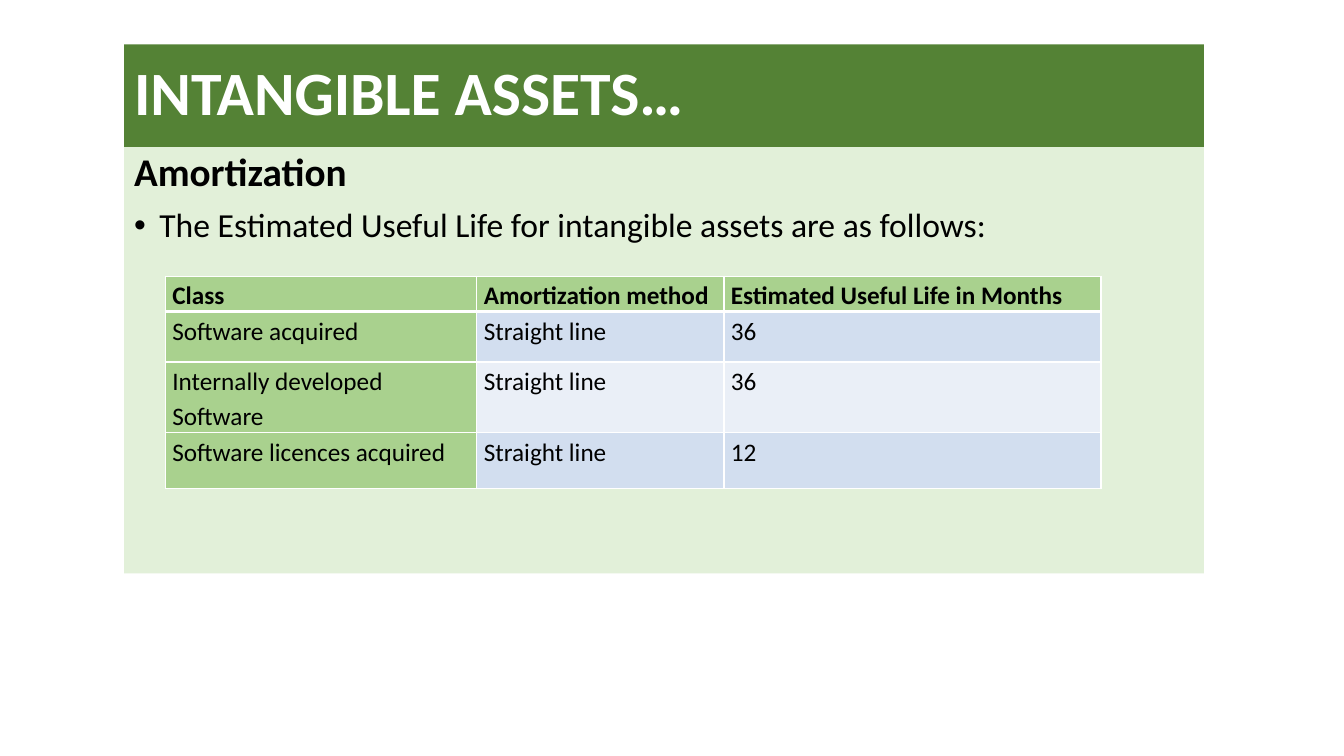
from lxml import etree
from pptx import Presentation
from pptx.dml.color import RGBColor
from pptx.enum.text import MSO_ANCHOR as Anchor, MSO_AUTO_SIZE as AutoSize, PP_ALIGN as Align
from pptx.oxml.ns import qn
from pptx.util import Inches, Pt

DARK_GREEN = RGBColor(0x54, 0x82, 0x35)
MID_GREEN = RGBColor(0xA9, 0xD1, 0x8E)
PALE_GREEN = RGBColor(0xE2, 0xF0, 0xD9)
BLUE = RGBColor(0xD2, 0xDE, 0xEF)
PALE_BLUE = RGBColor(0xEA, 0xEF, 0xF7)
WHITE = RGBColor(0xFF, 0xFF, 0xFF)
BLACK = RGBColor(0, 0, 0)

PANEL_LEFT, PANEL_WIDTH = 1.23, 10.71
TITLE_TOP, TITLE_HEIGHT = 0.44, 1.02
BODY_HEIGHT = 4.23
COLUMN_WIDTHS = [3.09, 2.45, 3.74]
ROW_HEIGHTS = [0.35, 0.5, 0.7, 0.55]
ROWS = [
    ["Class", "Amortization method", "Estimated Useful Life in Months"],
    ["Software acquired", "Straight line", "36"],
    ["Internally developed Software", "Straight line", "36"],
    ["Software licences acquired", "Straight line", "12"],
]


def style(paragraph, size, bold, color, spacing):
    paragraph.font.name = "Calibri"
    paragraph.font.size = Pt(size)
    paragraph.font.bold = bold
    paragraph.font.color.rgb = color
    paragraph.line_spacing = spacing
    paragraph.alignment = Align.LEFT


def add_border(cell, side, width):
    line = etree.SubElement(cell._tc.get_or_add_tcPr(), qn("a:" + side), w=str(Pt(width)))
    fill = etree.SubElement(line, qn("a:solidFill"))
    etree.SubElement(fill, qn("a:srgbClr"), val=str(WHITE))


presentation = Presentation()
presentation.slide_width, presentation.slide_height = Inches(13.33), Inches(7.5)
slide = presentation.slides.add_slide(presentation.slide_layouts[1])
title, body = slide.shapes.title, slide.placeholders[1]

# Title band and body panel, stacked
panels = [
    (title, TITLE_TOP, TITLE_HEIGHT, DARK_GREEN, Anchor.MIDDLE),
    (body, TITLE_TOP + TITLE_HEIGHT, BODY_HEIGHT, PALE_GREEN, Anchor.TOP),
]
for panel, top, height, color, anchor in panels:
    panel.left, panel.top = Inches(PANEL_LEFT), Inches(top)
    panel.width, panel.height = Inches(PANEL_WIDTH), Inches(height)
    panel.fill.solid()
    panel.fill.fore_color.rgb = color
    panel.text_frame.auto_size = AutoSize.NONE
    panel.text_frame.vertical_anchor = anchor

title.text_frame.text = "INTANGIBLE ASSETS…"
style(title.text_frame.paragraphs[0], 44, True, WHITE, 0.9)

# Heading and bullet
body.text_frame.text = "Amortization\nThe Estimated Useful Life for intangible assets are as follows:"
heading, bullet = body.text_frame.paragraphs
for paragraph, size, bold, indent, mark in [
    (heading, 28, True, 0, None),
    (bullet, 24, False, 0.25, "•"),
]:
    style(paragraph, size, bold, BLACK, 0.9)
    paragraph.space_before = Pt(10)
    properties = paragraph._p.get_or_add_pPr()
    properties.set("marL", str(Inches(indent)))
    properties.set("indent", str(Inches(-indent)))
    if mark:
        etree.SubElement(properties, qn("a:buFont"), typeface="Arial")
        etree.SubElement(properties, qn("a:buChar"), char=mark)
    else:
        etree.SubElement(properties, qn("a:buNone"))

# Useful life table
table = slide.shapes.add_table(
    len(ROWS), len(COLUMN_WIDTHS), Inches(1.64), Inches(2.74),
    Inches(sum(COLUMN_WIDTHS)), Inches(sum(ROW_HEIGHTS)),
).table
for column, width in zip(table.columns, COLUMN_WIDTHS):
    column.width = Inches(width)
for row, height in zip(table.rows, ROW_HEIGHTS):
    row.height = Inches(height)

for r, texts in enumerate(ROWS):
    for c, text in enumerate(texts):
        cell = table.cell(r, c)
        cell.text = text
        cell.margin_left = cell.margin_right = Inches(0.07)
        cell.margin_top = cell.margin_bottom = 0
        style(cell.text_frame.paragraphs[0], 18, r == 0, BLACK, 1.15)
        # The rule under the header is thicker than the others
        add_border(cell, "lnL", 1)
        add_border(cell, "lnR", 1)
        add_border(cell, "lnT", 3 if r == 1 else 1)
        add_border(cell, "lnB", 3 if r == 0 else 1)
        cell.fill.solid()
        if r == 0 or c == 0:
            cell.fill.fore_color.rgb = MID_GREEN
        else:
            cell.fill.fore_color.rgb = BLUE if r % 2 else PALE_BLUE

presentation.save("out.pptx")
